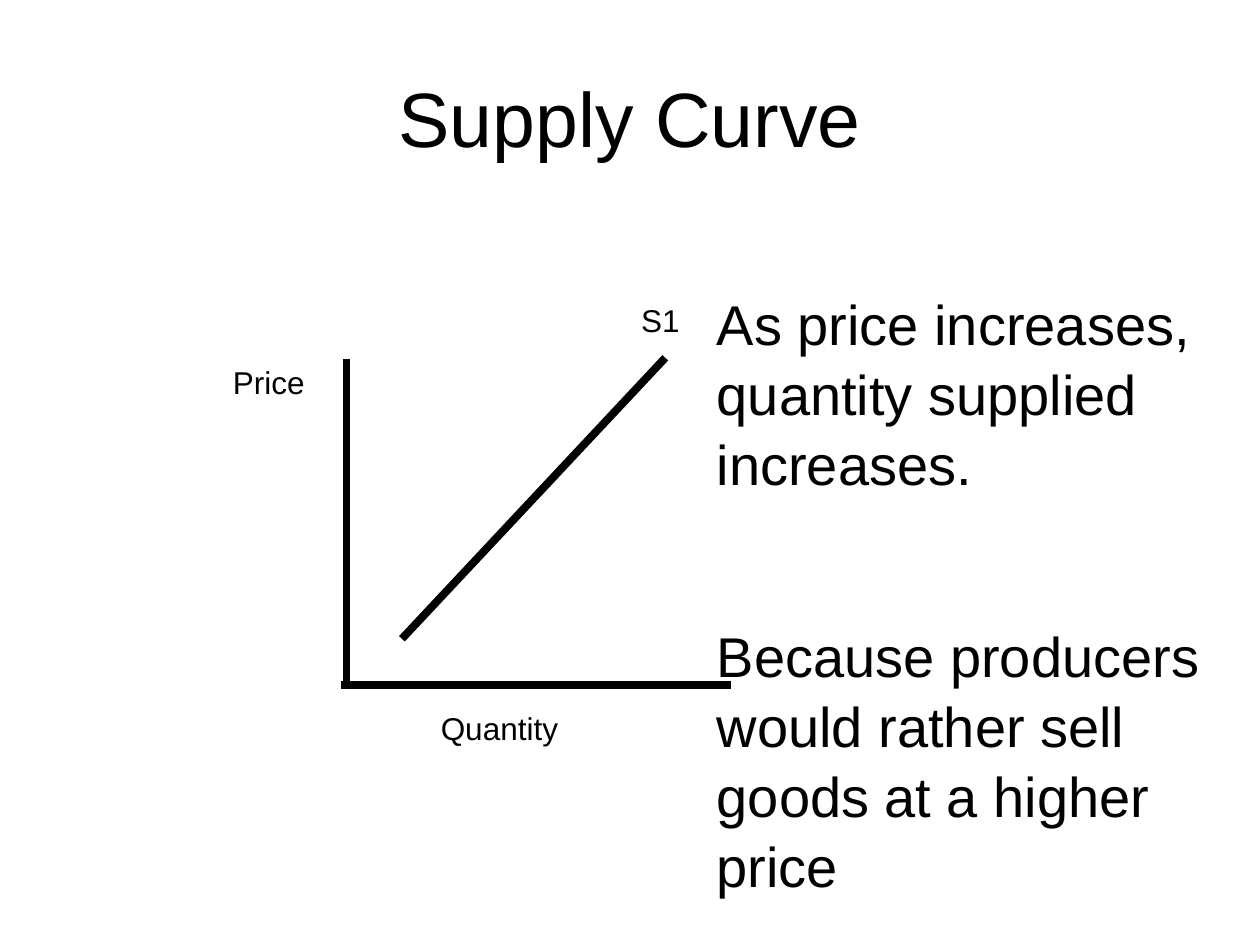
from lxml.etree import SubElement
from pptx import Presentation
from pptx.dml.color import RGBColor
from pptx.enum.shapes import MSO_CONNECTOR
from pptx.enum.text import MSO_ANCHOR, PP_ALIGN
from pptx.oxml.ns import qn
from pptx.util import Inches, Pt

COLORS = {"background": "FFFFFF", "ink": "000000"}
FONT = "Arial"
TITLE_SIZE, BODY_SIZE, LABEL_SIZE = 44, 32, 18
LABEL_HEIGHT = 0.4


def set_attributes(target, values):
    for name, value in values.items():
        setattr(target, name, value)


def add_text(slide, box, paragraphs, size, paragraph_format=None, anchor=MSO_ANCHOR.TOP):
    shape = slide.shapes.add_textbox(*map(Inches, box))
    frame = shape.text_frame
    set_attributes(frame, {"word_wrap": True, "vertical_anchor": anchor})
    for index, text in enumerate(paragraphs):
        paragraph = frame.add_paragraph() if index else frame.paragraphs[0]
        set_attributes(paragraph, paragraph_format or {})
        run = paragraph.add_run()
        run.text = text
        set_attributes(run.font, {"name": FONT, "size": Pt(size)})
        run.font.color.rgb = RGBColor.from_string(COLORS["ink"])
    return frame


def add_line(slide, start, end):
    connector = slide.shapes.add_connector(
        MSO_CONNECTOR.STRAIGHT, *map(Inches, (*start, *end))
    )
    connector.line.width = Pt(4.5)
    connector.line.color.rgb = RGBColor.from_string(COLORS["ink"])
    SubElement(connector._element.spPr, qn("a:effectLst"))


def add_title(slide, box):
    add_text(slide, box, ["Supply Curve"], TITLE_SIZE,
             {"alignment": PP_ALIGN.CENTER}, MSO_ANCHOR.MIDDLE)


def add_supply_graph(slide, box):
    left, top, width, height = box
    bottom = top + height
    axis = left + 1
    lines = [
        ((axis, top + 0.62), (axis, bottom - 0.54)),
        ((axis - 0.04, bottom - 0.54), (left + width, bottom - 0.54)),
        ((left + 3.53, top + 0.61), (left + 1.44, bottom - 0.91)),
    ]
    labels = [
        ("Price", left, top + 0.6, 0.83),
        ("Quantity", left + 1.65, bottom - LABEL_HEIGHT, 1.42),
        ("S1", left + 3.24, top + 0.11, 0.75),
    ]
    for start, end in lines:
        add_line(slide, start, end)
    for text, label_left, label_top, label_width in labels:
        add_text(slide, (label_left, label_top, label_width, LABEL_HEIGHT),
                 [text], LABEL_SIZE)


def add_explanation(slide, box):
    frame = add_text(slide, box, [
        "As price increases, quantity supplied increases.",
        "Because producers would rather sell goods at a higher price",
    ], BODY_SIZE, {"line_spacing": 1.04})
    frame.paragraphs[1].space_before = Pt(70)


def main():
    presentation = Presentation()
    set_attributes(presentation, {"slide_width": Inches(10), "slide_height": Inches(7.5)})
    slide = presentation.slides.add_slide(presentation.slide_layouts[6])
    fill = slide.background.fill
    fill.solid()
    fill.fore_color.rgb = RGBColor.from_string(COLORS["background"])
    add_title(slide, (0.5, 0.3, 9, 1.25))
    add_supply_graph(slide, (1.75, 2.23, 4.05, 3.75))
    add_explanation(slide, (5.59, 2.23, 4.41, 4.9))
    presentation.save("out.pptx")


if __name__ == "__main__":
    main()
